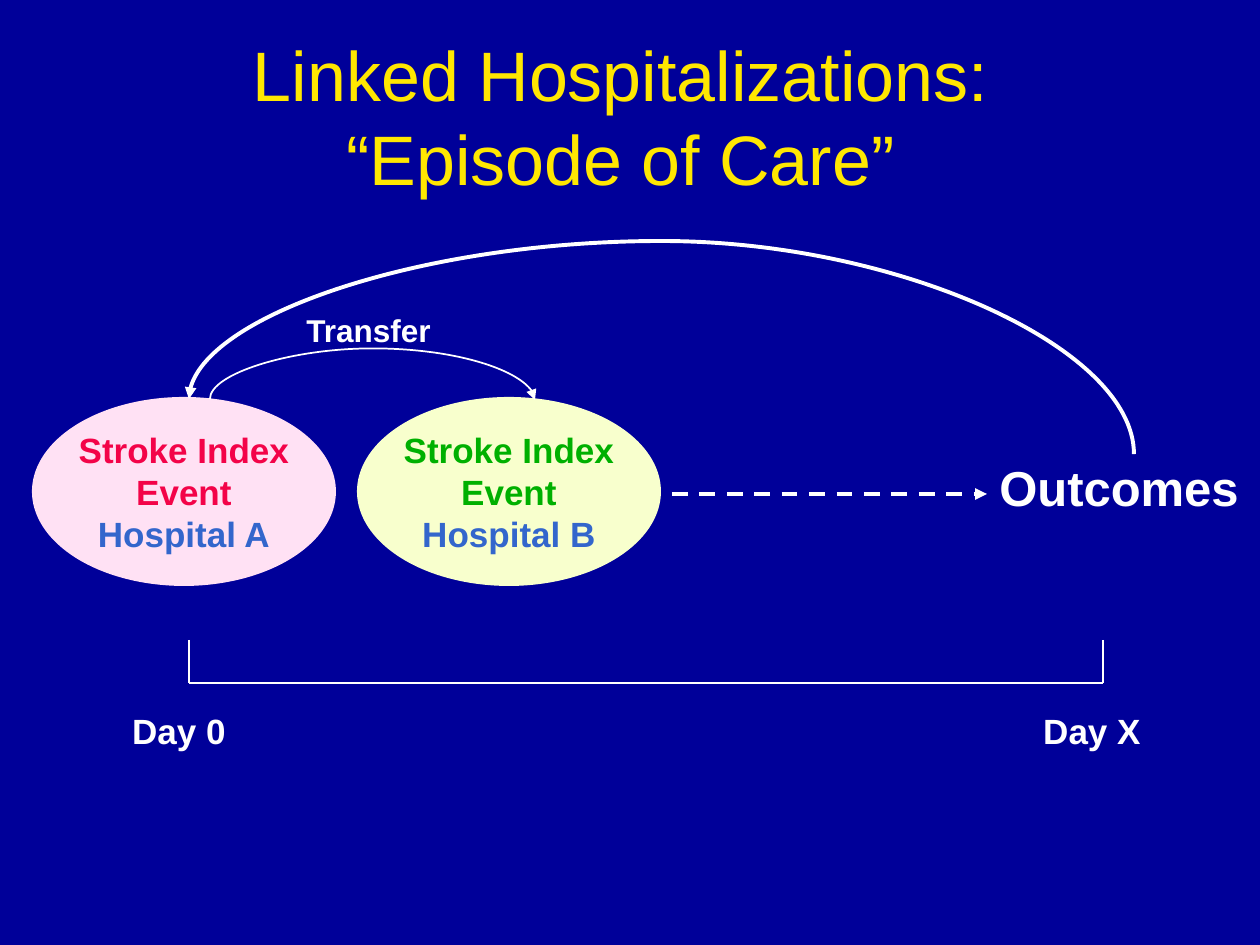
"""Build the slide on linked hospitalizations as one episode of care."""
from lxml.etree import SubElement
from pptx import Presentation
from pptx.dml.color import RGBColor
from pptx.enum.dml import MSO_LINE
from pptx.enum.shapes import MSO_CONNECTOR, MSO_SHAPE
from pptx.enum.text import MSO_ANCHOR, MSO_AUTO_SIZE, PP_ALIGN
from pptx.oxml.ns import qn
from pptx.util import Emu, Pt

THEME = {
    "font": "Arial",
    "background": "000099",
    "title": "FFE701",
    "white": "FFFFFF",
    "hospital": "3366CC",
    "pink": "FFE1F4",
    "red": "F30348",
    "cream": "F8FFCD",
    "green": "00B000",
    "title_size": 40,
    "outcome_size": 28,
    "label_size": 20,
    "transfer_size": 18,
}
EMU_PER_PX = 914400 / 126


def px(length):
    return Emu(round(length * EMU_PER_PX))


def write_text(frame, lines, size, alignment, bold=True, **frame_format):
    for name, value in frame_format.items():
        setattr(frame, name, value)
    frame.text = "\n".join(text for text, color in lines)
    for paragraph, (text, color) in zip(frame.paragraphs, lines):
        paragraph.alignment = alignment
        for run in paragraph.runs:
            run_format = {"name": THEME["font"], "size": Pt(THEME[size]), "bold": bold}
            for name, value in run_format.items():
                setattr(run.font, name, value)
            run.font.color.rgb = RGBColor.from_string(THEME[color])


presentation = Presentation()
presentation.slide_width = px(1260)
presentation.slide_height = px(945)
slide = presentation.slides.add_slide(presentation.slide_layouts[5])
slide.background.fill.solid()
slide.background.fill.fore_color.rgb = RGBColor.from_string(THEME["background"])

title = slide.shapes.title
title_place = {"left": px(63), "top": px(42), "width": px(1134), "height": px(147)}
for name, value in title_place.items():
    setattr(title, name, value)
write_text(
    title.text_frame,
    [("Linked Hospitalizations: \v“Episode of Care” ", "title")],
    "title_size",
    PP_ALIGN.CENTER,
    bold=False,
    vertical_anchor=MSO_ANCHOR.MIDDLE,
    auto_size=MSO_AUTO_SIZE.NONE,
    word_wrap=True,
)

hospitals = [
    (32, "pink", "red", "Hospital A"),
    (357, "cream", "green", "Hospital B"),
]
for left, fill, event_color, hospital in hospitals:
    ellipse = slide.shapes.add_shape(MSO_SHAPE.OVAL, px(left), px(397), px(304), px(189))
    ellipse.shadow.inherit = False
    ellipse.fill.solid()
    ellipse.fill.fore_color.rgb = RGBColor.from_string(THEME[fill])
    ellipse.line.fill.background()
    write_text(
        ellipse.text_frame,
        [("Stroke Index", event_color), ("Event", event_color), (hospital, "hospital")],
        "label_size",
        PP_ALIGN.CENTER,
        vertical_anchor=MSO_ANCHOR.MIDDLE,
        word_wrap=False,
    )

labels = [
    ("Outcomes", 987, 451, 284, 72, "outcome_size", PP_ALIGN.LEFT),
    ("Transfer", 294, 305, 168, 50, "transfer_size", PP_ALIGN.LEFT),
    ("Day 0", 116, 703, 126, 54, "label_size", PP_ALIGN.CENTER),
    ("Day X", 1029, 703, 126, 54, "label_size", PP_ALIGN.CENTER),
]
for text, left, top, width, height, size, alignment in labels:
    label = slide.shapes.add_textbox(px(left), px(top), px(width), px(height))
    write_text(
        label.text_frame,
        [(text, "white")],
        size,
        alignment,
        word_wrap=True,
        auto_size=MSO_AUTO_SIZE.SHAPE_TO_FIT_TEXT,
    )

day_0, day_x, tick_top, timeline = 189, 1103, 640, 683
connectors = [
    {"ends": (672, 494, 987, 494), "weight": 2.25, "dash": MSO_LINE.DASH, "arrow": "tailEnd"},
    {"ends": (day_0, timeline, day_x, timeline), "weight": 1.5},
    {"ends": (day_0, tick_top, day_0, timeline), "weight": 1.5},
    {"ends": (day_x, tick_top, day_x, timeline), "weight": 1.5},
    {"ends": (210, 399, 535, 400), "weight": 1, "arrow": "tailEnd", "peak": 348},
    {"ends": (189, 399, 1134, 454), "weight": 2.25, "arrow": "headEnd", "peak": 241},
]
for item in connectors:
    start_x, start_y, end_x, end_y = item["ends"]
    if "peak" in item:
        center_x, center_y = (start_x + end_x) / 2, (start_y + end_y) / 2
        half_width, half_height = (end_y - start_y) / 2, (end_x - start_x) / 2
        connector = slide.shapes.add_connector(
            MSO_CONNECTOR.CURVE,
            px(center_x - half_width),
            px(center_y + half_height),
            px(center_x + half_width),
            px(center_y - half_height),
        )
        properties = connector._element.spPr
        properties.find(qn("a:xfrm")).set("rot", "5400000")
        bend = round((item["peak"] - start_y) / (end_y - start_y) * 100000)
        adjustments = properties.find(qn("a:prstGeom")).find(qn("a:avLst"))
        SubElement(adjustments, qn("a:gd"), name="adj1", fmla=f"val {bend}")
    else:
        connector = slide.shapes.add_connector(
            MSO_CONNECTOR.STRAIGHT, px(start_x), px(start_y), px(end_x), px(end_y)
        )
    connector.line.color.rgb = RGBColor.from_string(THEME["white"])
    line_format = {"width": Pt(item["weight"]), "dash_style": item.get("dash")}
    for name, value in line_format.items():
        setattr(connector.line, name, value)
    if "arrow" in item:
        outline = connector._element.spPr.find(qn("a:ln"))
        SubElement(outline, qn("a:" + item["arrow"]), type="triangle")
    SubElement(connector._element.spPr, qn("a:effectLst"))

presentation.save("out.pptx")
